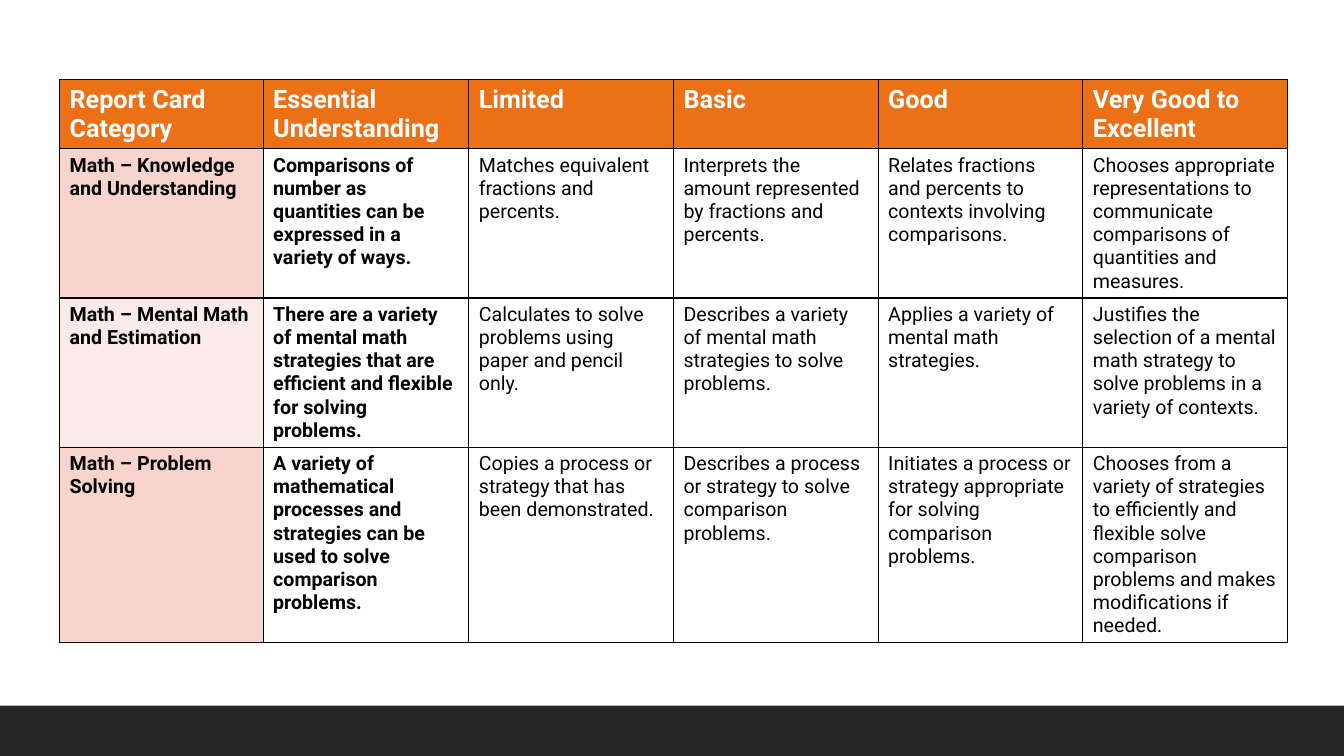
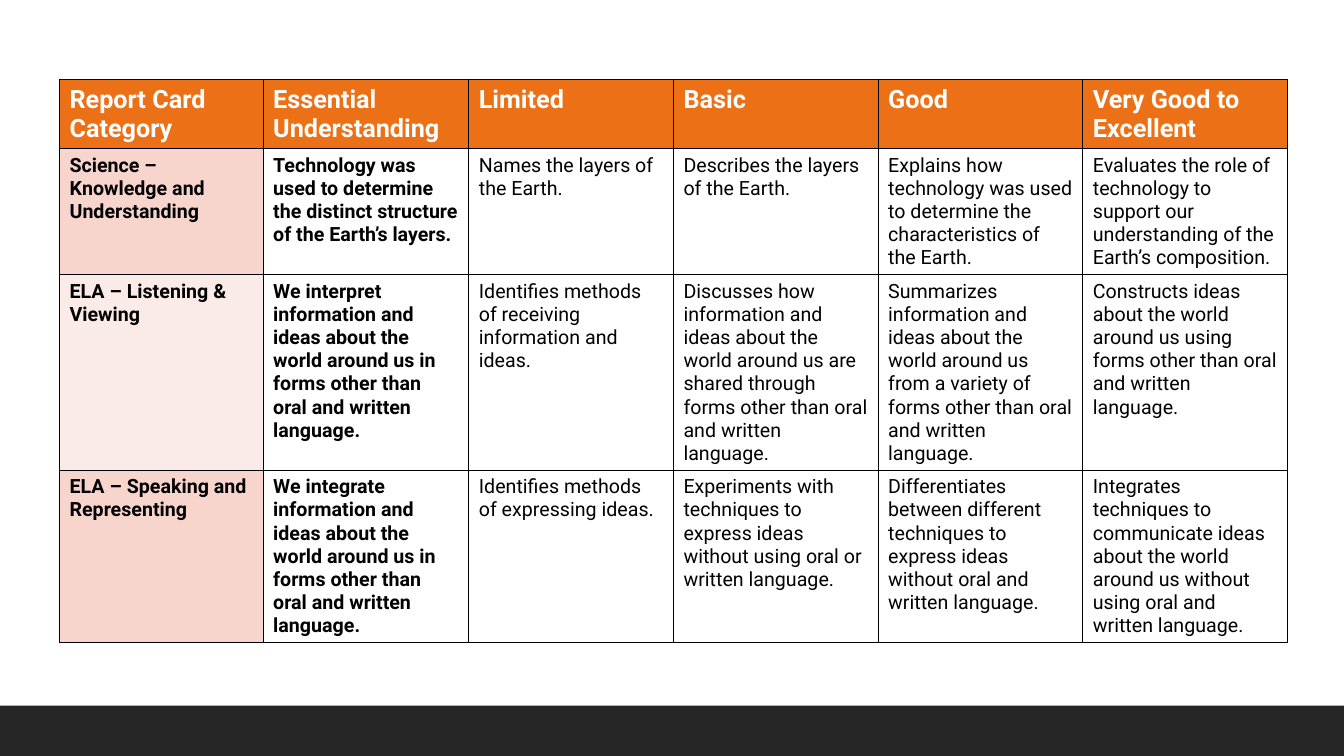
from lxml.etree import SubElement
from pptx import Presentation
from pptx.dml.color import RGBColor
from pptx.enum.shapes import MSO_SHAPE
from pptx.oxml.ns import qn
from pptx.util import Inches, Pt

FONT = "Roboto"
BLACK, WHITE, BAND = "000000", "FFFFFF", "262626"
ORANGE, PINK, PALE_PINK = "EC7016", "F8D5CC", "FBEBE8"

HEADER = ["Report Card Category", "Essential Understanding", "Limited", "Basic",
          "Good", "Very Good to Excellent"]
COL_WIDTHS = [2.02, 2.04, 2.03, 2.03, 2.03, 2.03]
HEADER_HEIGHT, LINE_HEIGHT, CELL_PADDING = 0.68, 0.23, 0.1

# Each rubric row: number of text lines in its longest cell, then the cells
RUBRICS = [
    [
        (6, ["Math – Knowledge and Understanding",
             "Comparisons of number as quantities can be expressed in a variety of ways.",
             "Matches equivalent fractions and percents.",
             "Interprets the amount represented by fractions and percents.",
             "Relates fractions and percents to contexts involving comparisons.",
             "Chooses appropriate representations to communicate comparisons of "
             "quantities and measures."]),
        (6, ["Math – Mental Math and Estimation",
             "There are a variety of mental math strategies that are efficient and "
             "flexible for solving problems.",
             "Calculates to solve problems using paper and pencil only.",
             "Describes a variety of mental math strategies to solve problems.",
             "Applies a variety of mental math strategies.",
             "Justifies the selection of a mental math strategy to solve problems in "
             "a variety of contexts."]),
        (8, ["Math – Problem Solving",
             "A variety of mathematical processes and strategies can be used to solve "
             "comparison problems.",
             "Copies a process or strategy that has been demonstrated.",
             "Describes a process or strategy to solve comparison problems.",
             "Initiates a process or strategy appropriate for solving comparison problems.",
             "Chooses from a variety of strategies to efficiently and flexible solve "
             "comparison problems and makes modifications if needed."]),
    ],
    [
        (5, ["Science – Knowledge and Understanding",
             "Technology was used to determine the distinct structure of the Earth’s layers.",
             "Names the layers of the Earth.",
             "Describes the layers of the Earth.",
             "Explains how technology was used to determine the characteristics of the Earth.",
             "Evaluates the role of technology to support our understanding of the "
             "Earth’s composition."]),
        (8, ["ELA – Listening & Viewing",
             "We interpret information and ideas about the world around us in forms "
             "other than oral and written language.",
             "Identifies methods of receiving information and ideas.",
             "Discusses how information and ideas about the world around us are shared "
             "through forms other than oral and written language.",
             "Summarizes information and ideas about the world around us from a variety "
             "of forms other than oral and written language.",
             "Constructs ideas about the world around us using forms other than oral "
             "and written language."]),
        (7, ["ELA – Speaking and Representing",
             "We integrate information and ideas about the world around us in forms "
             "other than oral and written language.",
             "Identifies methods of expressing ideas.",
             "Experiments with techniques to express ideas without using oral or "
             "written language.",
             "Differentiates between different techniques to express ideas without "
             "oral and written language.",
             "Integrates techniques to communicate ideas about the world around us "
             "without using oral and written language."]),
    ],
]


def paint(fill, color):
    fill.solid()
    fill.fore_color.rgb = RGBColor.from_string(color)


def style_cell(cell, text, size, color, bold, fill):
    """Write one run, draw a black border on all sides and fill the cell."""
    r = cell.text_frame.paragraphs[0].add_run()
    r.text = text
    r.font.name, r.font.size, r.font.bold = FONT, Pt(size), bold
    paint(r.font.fill, color)
    tc_pr = cell._tc.get_or_add_tcPr()
    for side in ("lnL", "lnR", "lnT", "lnB"):
        ln = SubElement(tc_pr, qn(f"a:{side}"), w=str(Pt(1)))
        solid = SubElement(ln, qn("a:solidFill"))
        SubElement(solid, qn("a:srgbClr"), val=BLACK)
    if fill:
        paint(cell.fill, fill)
    else:
        cell.fill.background()


prs = Presentation()
prs.slide_width, prs.slide_height = Inches(13.33), Inches(7.5)
master, blank = prs.slide_master, prs.slide_layouts[6]

# Keep only the blank layout, and no placeholders that stay unused
for layout in list(prs.slide_layouts):
    if layout.name != blank.name:
        prs.slide_layouts.remove(layout)
for owner in (master, blank):
    for placeholder in list(owner.placeholders):
        owner.shapes.element.remove(placeholder.element)

slides = [prs.slides.add_slide(blank) for _ in RUBRICS]

# Footer band: made on a slide, then moved to the shared master
band = slides[0].shapes.add_shape(MSO_SHAPE.RECTANGLE, 0, Inches(7),
                                  prs.slide_width, Inches(0.5))
band.shadow.inherit = False
paint(band.fill, BAND)
band.line.fill.background()
master.shapes.element.insert(2, band.element)

for slide, rubric in zip(slides, RUBRICS):
    heights = [HEADER_HEIGHT]
    heights += [CELL_PADDING + LINE_HEIGHT * lines for lines, _ in rubric]
    frame = slide.shapes.add_table(len(heights), len(HEADER), Inches(0.59), Inches(0.79),
                                   Inches(sum(COL_WIDTHS)), Inches(sum(heights)))
    table = frame.table
    table.horz_banding = False
    for column, width in zip(table.columns, COL_WIDTHS):
        column.width = Inches(width)
    for row, height in zip(table.rows, heights):
        row.height = Inches(height)

    for c, text in enumerate(HEADER):
        style_cell(table.cell(0, c), text, 18, WHITE, True, ORANGE)
    for r, (_, texts) in enumerate(rubric, start=1):
        category_fill = PINK if r % 2 else PALE_PINK
        for c, text in enumerate(texts):
            style_cell(table.cell(r, c), text, 14, BLACK, c < 2,
                       category_fill if c == 0 else None)

prs.save("out.pptx")
